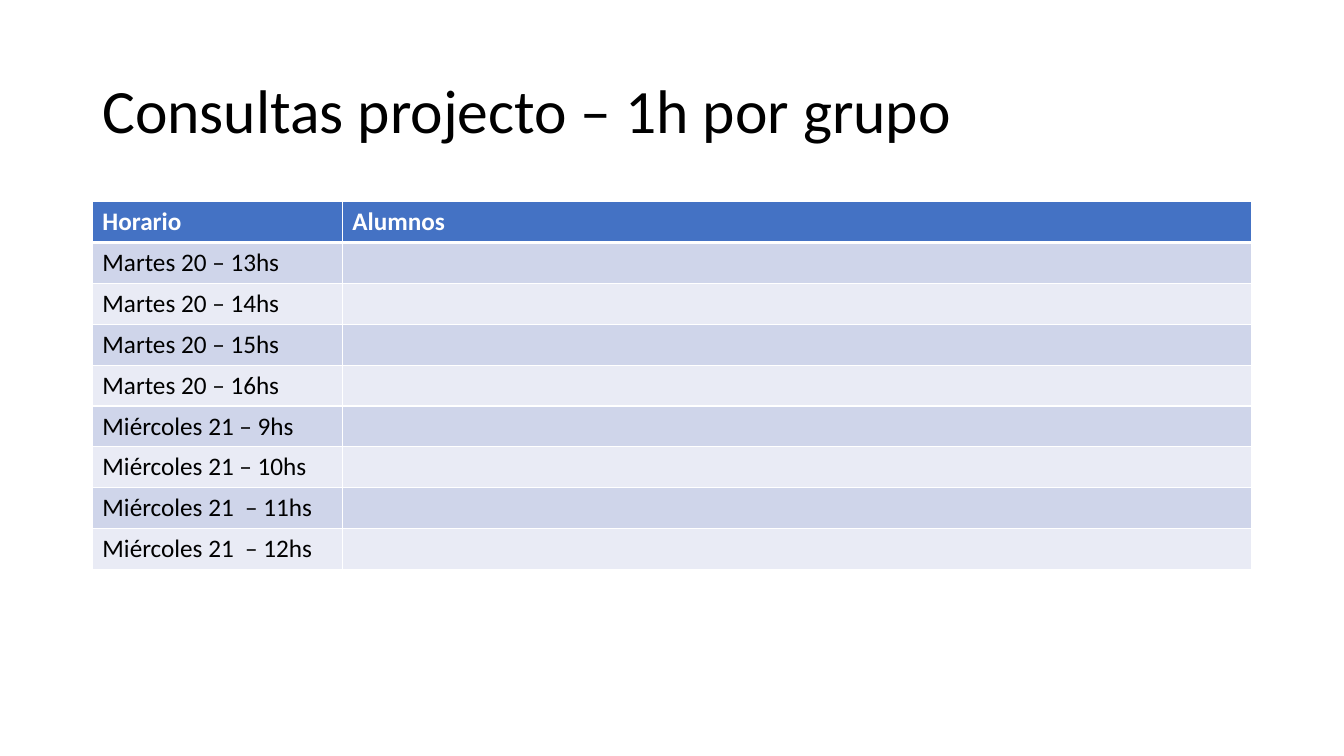
from lxml import etree
from pptx import Presentation
from pptx.dml.color import RGBColor
from pptx.enum.text import MSO_ANCHOR
from pptx.oxml.ns import qn
from pptx.util import Pt

MIDDLE = MSO_ANCHOR.MIDDLE
FONT = "Calibri"
COLORS = {
    "text": "000000",
    "white": "FFFFFF",
    "header": "4472C4",
    "odd": "CFD5EA",
    "even": "E9EBF5",
}
LEFT, WIDTH = 66, 828
ROW_HEIGHT = 29.2
COLUMN_WIDTHS = (178.5, 649.5)
HEADINGS = ("Horario", "Alumnos")
TIMES = (
    "Martes 20 – 13hs",
    "Martes 20 – 14hs",
    "Martes 20 – 15hs",
    "Martes 20 – 16hs",
    "Miércoles 21 – 9hs",
    "Miércoles 21 – 10hs",
    "Miércoles 21  – 11hs",
    "Miércoles 21  – 12hs",
)


def color(name):
    return RGBColor.from_string(COLORS[name])


def write(frame, text, size, color_name, bold=False):
    frame.text = text
    para = frame.paragraphs[0]
    para.font.size = Pt(size)
    for span in para.runs:
        span.font.name = FONT
        span.font.size = Pt(size)
        span.font.bold = bold
        span.font.color.rgb = color(color_name)
    return para


def add_title(page, text):
    box = page.shapes.add_textbox(Pt(LEFT), Pt(28.75), Pt(WIDTH), Pt(104.5))
    frame = box.text_frame
    frame.word_wrap = True
    frame.vertical_anchor = MIDDLE
    write(frame, text, 44, "text").line_spacing = 0.9


def add_borders(cell, top, bottom):
    properties = cell._tc.get_or_add_tcPr()
    for side, width in (("L", 1), ("R", 1), ("T", top), ("B", bottom)):
        line = etree.SubElement(properties, qn(f"a:ln{side}"), w=str(Pt(width)))
        fill = etree.SubElement(line, qn("a:solidFill"))
        etree.SubElement(fill, qn("a:srgbClr"), val=COLORS["white"])


def style_cell(cell, text, row):
    is_header = row == 0
    add_borders(cell, 3 if row == 1 else 1, 3 if is_header else 1)
    fill_name = "header" if is_header else ("even", "odd")[row % 2]
    cell.fill.solid()
    cell.fill.fore_color.rgb = color(fill_name)
    write(cell.text_frame, text, 18, "white" if is_header else "text", is_header)


def add_schedule(page, rows):
    frame = page.shapes.add_table(
        len(rows), len(COLUMN_WIDTHS), Pt(LEFT), Pt(144), Pt(WIDTH), Pt(ROW_HEIGHT * len(rows))
    )
    table = frame.table
    for column, width in zip(table.columns, COLUMN_WIDTHS):
        column.width = Pt(width)
    for row, texts in enumerate(rows):
        table.rows[row].height = Pt(ROW_HEIGHT)
        for column, text in enumerate(texts):
            style_cell(table.cell(row, column), text, row)


def main():
    deck = Presentation()
    deck.slide_width, deck.slide_height = Pt(960), Pt(540)
    page = deck.slides.add_slide(deck.slide_layouts[6])
    add_title(page, "Consultas projecto – 1h por grupo")
    add_schedule(page, [HEADINGS] + [(time, "") for time in TIMES])
    deck.save("out.pptx")


if __name__ == "__main__":
    main()
